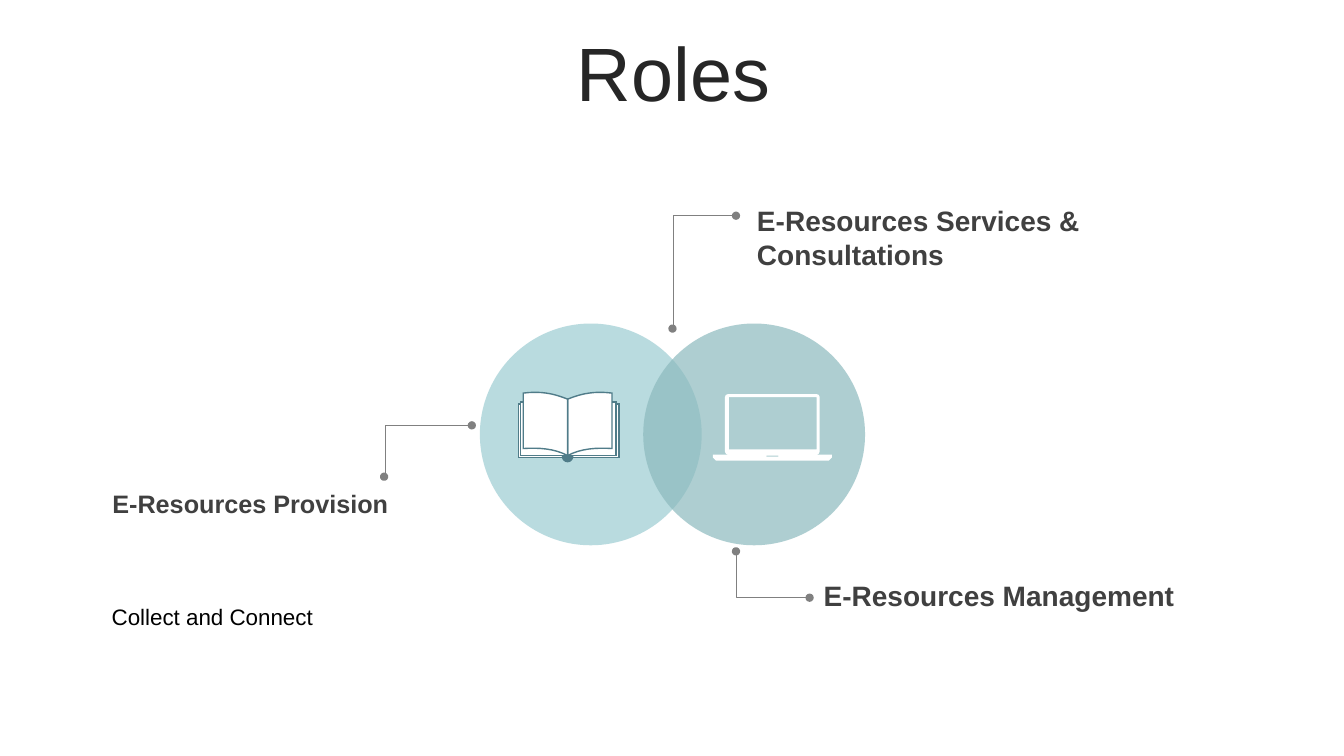
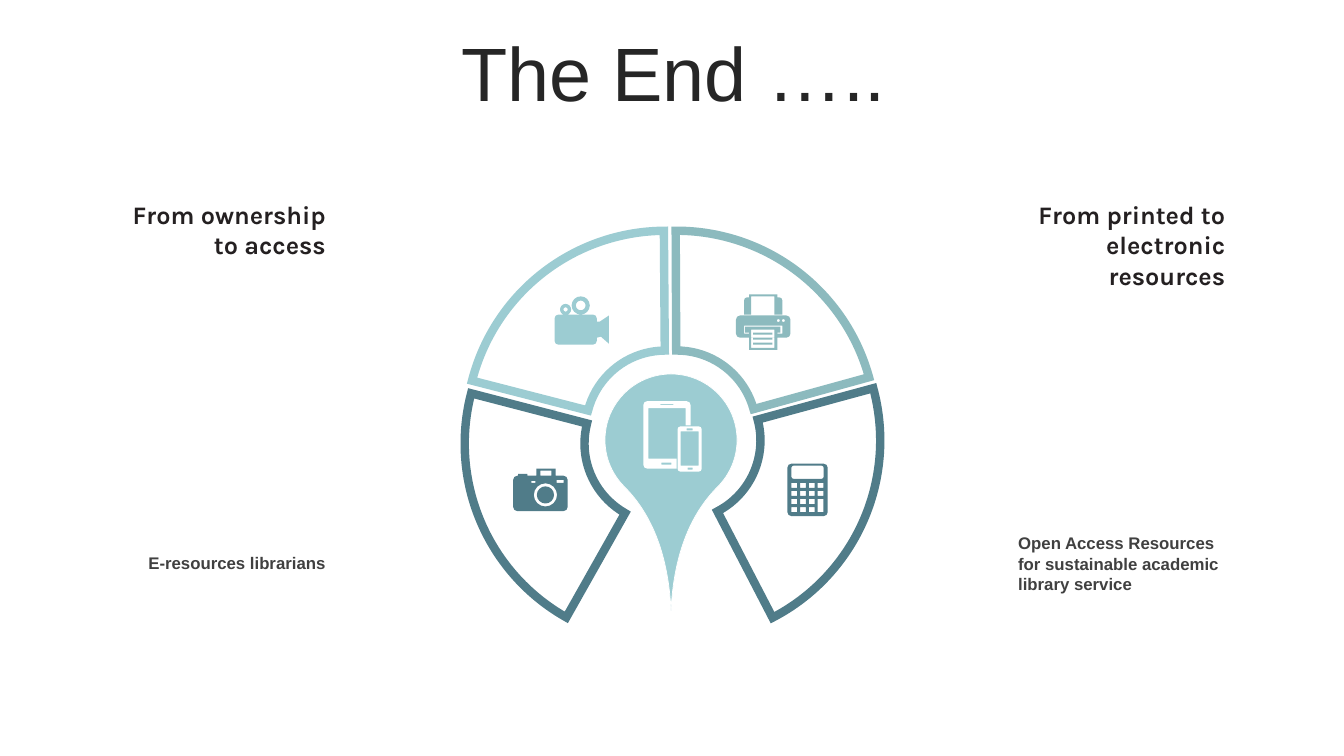
import math
from dataclasses import dataclass

import pptx
import pptx.dml.color
import pptx.enum.shapes
import pptx.enum.text
import pptx.oxml
import pptx.oxml.ns
import pptx.util

KIND = pptx.enum.shapes.MSO_SHAPE
ALIGN = pptx.enum.text.PP_ALIGN
ANCHOR = pptx.enum.text.MSO_ANCHOR


@dataclass(frozen=True)
class Theme:
    white: str = "FFFFFF"
    black: str = "000000"
    head: str = "262626"
    body: str = "404040"
    ink: str = "242021"
    wire: str = "808080"
    sky: str = "9CCCD2"
    sage: str = "8CBABE"
    deep: str = "507C89"
    font: str = "Arial"
    alt: str = "Karla"
    huge: int = 54
    large: int = 20
    mid: int = 18
    plain: int = 16
    small: int = 12


T = Theme()
WIDE, HIGH = pptx.util.Inches(13.33), pptx.util.Inches(7.5)
COLS, ROWS = 133.3, 75


def col(n):
    return round(WIDE * n / COLS)


def row(n):
    return round(HIGH * n / ROWS)


def place(x, y, w, h):
    return col(x), row(y), col(w), row(h)


def rgb(code):
    return pptx.dml.color.RGBColor.from_string(code)


def add_tag(owner, tag, **attrs):
    node = pptx.oxml.parse_xml(f"<a:{tag} {pptx.oxml.ns.nsdecls('a')}/>")
    for key, value in attrs.items():
        node.set(key, value)
    owner.append(node)


def paint(shape, fill, line=None, width=1, alpha=None):
    shape.shadow.inherit = False
    shape.fill.solid()
    shape.fill.fore_color.rgb = rgb(fill)
    if alpha:
        tint = shape.fill._xPr.find(".//" + pptx.oxml.ns.qn("a:srgbClr"))
        add_tag(tint, "alpha", val=str(alpha * 1000))
    if line:
        shape.line.color.rgb = rgb(line)
        shape.line.width = pptx.util.Pt(width)
        add_tag(shape.line._get_or_add_ln(), "miter", lim="800000")
    else:
        shape.line.fill.background()


def form(slide, kind, box, fill, turn=0, adj=(), **look):
    shape = slide.shapes.add_shape(kind, *place(*box))
    shape.rotation = turn
    for i, value in enumerate(adj):
        shape.adjustments[i] = value
    paint(shape, fill, **look)


def text(slide, words, box, size=T.small, color=T.body, font=T.font,
         bold=True, align=ALIGN.LEFT, anchor=ANCHOR.TOP, space=1.0):
    frame = slide.shapes.add_textbox(*place(*box)).text_frame
    frame.word_wrap = True
    frame.vertical_anchor = anchor
    para = frame.paragraphs[0]
    para.alignment = align
    para.line_spacing = space
    run = para.add_run()
    run.text = words
    run.font.size = pptx.util.Pt(size)
    run.font.name = font
    run.font.bold = bold
    run.font.color.rgb = rgb(color)


def arc(x, y, r, start, end, steps=2):
    turns = [math.radians(start + (end - start) * i / steps)
             for i in range(steps + 1)]
    return [(x + r * math.cos(t), y + r * math.sin(t)) for t in turns]


def ring(x, y, r):
    steps = 16 if r > 0.4 else 8
    return arc(x, y, r, 0, 360, steps)[:-1]


def rect(x, y, w, h, r=0):
    if not r:
        return [(x, y), (x + w, y), (x + w, y + h), (x, y + h)]
    left, right, top, base = x + r, x + w - r, y + r, y + h - r
    return (arc(left, top, r, 180, 270) + arc(right, top, r, 270, 360)
            + arc(right, base, r, 0, 90) + arc(left, base, r, 90, 180))


def bend(a, b, c, d, steps=8):
    def mix(i, t):
        s = 1 - t
        return (s**3 * a[i] + 3 * s * s * t * b[i]
                + 3 * s * t * t * c[i] + t**3 * d[i])
    return [(mix(0, n / steps), mix(1, n / steps)) for n in range(steps + 1)]


def draw(slide, loops, fill, **look):
    grid = [[(col(x), row(y)) for x, y in loop] for loop in loops]
    pen = slide.shapes.build_freeform(*grid[0][0])
    for i, loop in enumerate(grid):
        if i:
            pen.move_to(*loop[0])
        pen.add_line_segments(loop[1:], close=True)
    paint(pen.convert_to_shape(), fill, **look)


def elbow(slide, x, y, right, end):
    link = slide.shapes.add_connector(
        pptx.enum.shapes.MSO_CONNECTOR.ELBOW,
        col(x), row(y), col(right), row(end))
    link.line.color.rgb = rgb(T.wire)
    link.line.width = pptx.util.Pt(0.5)
    stroke = link.line._get_or_add_ln()
    for tag in ("headEnd", "tailEnd"):
        add_tag(stroke, tag, type="oval")
    props = link._element.spPr
    guides = props.find(".//" + pptx.oxml.ns.qn("a:avLst"))
    add_tag(guides, "gd", name="adj1", fmla="val 1000")
    add_tag(props, "effectLst")


def page(deck, title):
    slide = deck.slides.add_slide(deck.slide_layouts[6])
    text(slide, title, (3.5, 3.7, 126.6, 7.9), size=T.huge, color=T.head,
         bold=False, align=ALIGN.CENTER, anchor=ANCHOR.MIDDLE, space=0.9)
    return slide


def book(slide):
    look = dict(line=T.deep, width=1)
    for box in ((51.4, 40.1, 10, 5.3), (51.6, 39.9, 9.5, 5.3)):
        form(slide, KIND.RECTANGLE, box, T.white, **look)
    mid = 56.3
    for side in (1, -1):
        top = bend((0, 39.6), (1.5, 39), (2.7, 38.8), (4.4, 39))
        base = bend((4.4, 44.5), (2.9, 44.4), (1.3, 44.5), (0, 45.2))
        leaf = [(mid + side * x, y) for x, y in top + base]
        draw(slide, [leaf], T.white, **look)
    draw(slide, [arc(mid, 45.3, 0.5, 0, 180, 8)], T.deep, **look)


def laptop(slide):
    base = [(70.7, 45.1), (82.5, 45.1), (82.5, 45.4),
            (82.2, 45.7), (71, 45.7), (70.7, 45.4)]
    draw(slide, [rect(71.9, 39.1, 9.4, 6, 0.3), rect(72.3, 39.4, 8.7, 5.2),
                 base, rect(76, 45.2, 1.2, 0.1)], T.white)


def phones(slide):
    tablet = (arc(64.2, 40.2, 0.4, 180, 270) + arc(68.1, 40.2, 0.4, 270, 360)
              + [(68.5, 42.2), (68, 42.2), (68, 40.5), (64.3, 40.5),
                 (64.3, 45.5), (67.1, 45.5), (67.1, 46.5)]
              + arc(64.2, 46.1, 0.4, 90, 180))
    draw(slide, [tablet, rect(65.5, 40.1, 1.3, 0.1),
                 rect(65.6, 45.9, 1, 0.2),
                 rect(67.2, 42.3, 2.4, 4.5, 0.3),
                 rect(67.5, 42.8, 1.8, 3.4),
                 rect(68.1, 42.5, 0.6, 0.2),
                 rect(68.2, 46.4, 0.5, 0.2)], T.white)


def counter(slide):
    left, top, wide, high = 78.5, 47.9, 0.87, 0.8
    keys = [rect(left + c * wide, top + r * high, 0.56, 0.5)
            for c in range(4) for r in range(4) if c < 3 or r < 2]
    keys.append(rect(left + 3 * wide, top + 2 * high, 0.56, 1.3))
    draw(slide, [rect(78.1, 46, 4, 5.2, 0.4),
                 rect(78.5, 46.2, 3.2, 1.3, 0.2)] + keys, T.deep)


def printer(slide):
    tray = ([(73.8, 31.2)] + arc(74.1, 29.8, 0.3, 180, 270)
            + [(74.3, 29.5), (74.3, 29.2), (77.1, 29.2), (77.1, 29.5)]
            + arc(77.3, 29.8, 0.3, 270, 360)
            + [(77.6, 31.2), (76.8, 31.2), (76.8, 29.4),
               (74.5, 29.4), (74.5, 31.2)])
    slot = [(73.8, 32.3), (77.6, 32.3), (77.6, 33.1), (77.1, 33.1),
            (77.1, 33), (77.4, 33), (77.4, 32.4), (73.9, 32.4),
            (73.9, 33), (74.3, 33), (74.3, 33.1), (73.8, 33.1)]
    lines = [rect(74.7, 33 + 0.5 * i, 1.9, 0.2) for i in range(3)]
    dots = [ring(x, 31.8, 0.15) for x in (77.2, 77.7)]
    draw(slide, [tray, rect(73, 31.3, 5.4, 2.2, 0.4),
                 rect(74.3, 33.5, 2.8, 1.2), slot,
                 rect(74.5, 32.7, 2.3, 1.8)] + lines + dots, T.sage)


def camera(slide):
    draw(slide, [rect(50.9, 47.2, 5.4, 3.5, 0.4), rect(51.4, 47, 0.9, 0.2),
                 rect(53.2, 46.5, 1.9, 0.7), rect(53.6, 46.7, 1.1, 0.5),
                 ring(54.1, 49.1, 1.15), ring(54.1, 49.1, 0.85),
                 rect(52.7, 47.7, 0.4, 0.2),
                 rect(55.2, 47.6, 0.7, 0.3)], T.deep)


def movie(slide):
    lens = [(59.2, 31.9), (59.5, 31.9), (60.4, 31.3), (60.4, 34.1),
            (59.6, 33.4), (59.2, 33.5)]
    draw(slide, [rect(55, 31.2, 4.2, 3, 0.4), lens,
                 ring(57.6, 30.3, 0.9), ring(57.6, 30.3, 0.48),
                 ring(56.1, 30.7, 0.55), ring(56.1, 30.7, 0.22)], T.sky)


def roles(deck):
    slide = page(deck, "Roles")
    for x, fill in ((47.6, T.sky), (63.8, T.sage)):
        form(slide, KIND.OVAL, (x, 32.1, 22, 22), fill, alpha=70)
    for ends in ((66.7, 32.6, 73, 21.4), (38.1, 47.3, 46.8, 42.2),
                 (73, 54.7, 80.3, 59.3)):
        elbow(slide, *ends)
    text(slide, "E-Resources Services & Consultations",
         (74.1, 19.7, 45.3, 7.7), size=T.large)
    text(slide, "E-Resources Management", (80.7, 56.9, 45.1, 4.4),
         size=T.large)
    text(slide, "E-Resources Provision", (8.9, 48, 30.6, 4),
         size=T.mid, align=ALIGN.RIGHT)
    text(slide, "Collect and Connect", (10.1, 59.3, 23.4, 3.7),
         size=T.plain, color=T.black, bold=False)
    book(slide)
    laptop(slide)


def finish(deck):
    slide = page(deck, "The End …..")
    for x, y, turn, start, line in (
            (46.2, 22.9, 0, 116.65, T.sky), (47.3, 22.9, 75, 116.85, T.sage),
            (47.7, 23.9, 153, 115.08, T.deep),
            (46.1, 24.2, 285, 116.65, T.deep)):
        form(slide, KIND.BLOCK_ARC, (x, y, 39.6, 39.6), T.white, turn=turn,
             adj=(start, 161.74, 0.3), line=line, width=6)
    form(slide, KIND.TEAR, (60, 37.1, 13.1, 13.1), T.sky, turn=135,
         adj=(1.83,), line=T.white, width=0.5)
    for icon in (phones, counter, printer, camera, movie):
        icon(slide)
    for words, x in (("From ownership to access", 9.6),
                     ("From printed to electronic resources", 98.8)):
        text(slide, words, (x, 19.3, 23.7, 9.1), size=T.mid, color=T.ink,
             font=T.alt, align=ALIGN.RIGHT)
    text(slide, "E-resources librarians", (9.6, 54.3, 23.7, 3),
         align=ALIGN.RIGHT)
    text(slide, "Open Access Resources for sustainable academic "
         "library service", (100, 52.4, 23.7, 7.1))


def main():
    deck = pptx.Presentation()
    deck.slide_width, deck.slide_height = WIDE, HIGH
    roles(deck)
    finish(deck)
    deck.save("out.pptx")


if __name__ == "__main__":
    main()
